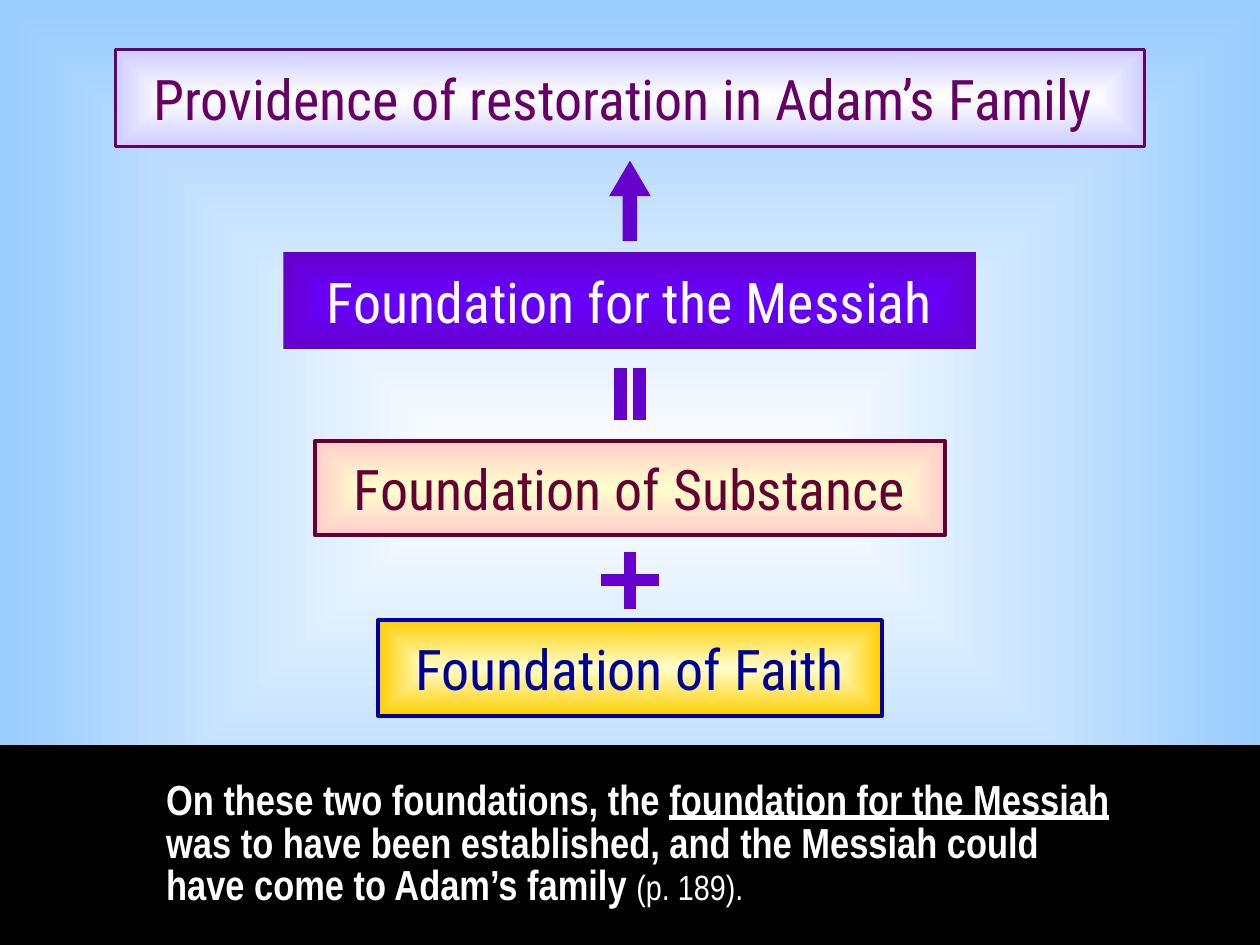
from lxml.etree import SubElement
from pptx import Presentation
from pptx.dml.color import RGBColor
from pptx.enum.shapes import MSO_CONNECTOR, MSO_SHAPE
from pptx.enum.text import MSO_ANCHOR, MSO_AUTO_SIZE, PP_ALIGN
from pptx.oxml.ns import qn
from pptx.util import Cm, Pt

WHITE = RGBColor(0xFF, 0xFF, 0xFF)
BLACK = RGBColor(0x00, 0x00, 0x00)
SKY = RGBColor(0x99, 0xCC, 0xFF)
LAVENDER = RGBColor(0xCC, 0xCC, 0xFF)
PLUM = RGBColor(0x66, 0x00, 0x66)
VIOLET = RGBColor(0x66, 0x00, 0xCC)
BRIGHT_VIOLET = RGBColor(0x66, 0x00, 0xFF)
CREAM = RGBColor(0xFF, 0xFF, 0xCC)
PINK = RGBColor(0xFF, 0xCC, 0xCC)
WINE = RGBColor(0x66, 0x00, 0x33)
GOLD = RGBColor(0xFF, 0xCC, 0x00)
NAVY = RGBColor(0x00, 0x00, 0x99)

SLIDE_WIDTH, SLIDE_HEIGHT = 25.4, 19.05
CENTER = SLIDE_WIDTH / 2
LABEL_FONT, NOTE_FONT = "Roboto Condensed", "Arial Narrow"
LABEL_HEIGHT = 1.6

# text, top, width, height, label width, inner, outer, text colour, outline in points
PANELS = [
    ("Providence of restoration in Adam’s Family ", 1, 20.75, 1.96, 20.52,
     WHITE, LAVENDER, PLUM, 1.5),
    ("Foundation for the Messiah", 5.08, 13.97, 1.96, 13.59,
     BRIGHT_VIOLET, VIOLET, WHITE, 0),
    ("Foundation of Substance", 8.89, 12.7, 1.9, 12.01,
     CREAM, PINK, WINE, 2.25),
    ("Foundation of Faith", 12.5, 10.16, 1.93, 9.27,
     CREAM, GOLD, NAVY, 2.25),
]
# x and y of both ends, as offsets from the slide's centre line and from the top
EQUALS_SIGN = [(-0.19, 7.42, -0.19, 8.46), (0.19, 7.42, 0.19, 8.46)]
PLUS_SIGN = [(0, 11.12, 0, 12.27), (-0.58, 11.69, 0.58, 11.69)]
# text, size, bold, underlined
NOTE = [
    ("On these two foundations, the ", 24, True, False),
    ("foundation for the Messiah", 24, True, True),
    (" was to have been established, and the Messiah could"
     " have come to Adam’s family ", 24, True, False),
    ("(p. 189).", 20, False, False),
]


def glow(fill, owner, inner, outer):
    """Fill with a gradient that runs from the centre to the edges."""
    fill.gradient()
    for stop, color in zip(fill.gradient_stops, (inner, outer)):
        stop.color.rgb = color
    gradient = owner.find(".//" + qn("a:gradFill"))
    gradient.remove(gradient.find(qn("a:lin")))
    route = SubElement(gradient, qn("a:path"), {"path": "shape"})
    SubElement(route, qn("a:fillToRect"), dict.fromkeys("ltrb", "50000"))


def place(shape, left, top, width, height):
    shape.left, shape.top = Cm(left), Cm(top)
    shape.width, shape.height = Cm(width), Cm(height)


def add_block(slide, kind, left, top, width, height):
    block = slide.shapes.add_shape(kind, Cm(left), Cm(top), Cm(width), Cm(height))
    block.shadow.inherit = False
    block.line.fill.background()
    return block


def prepare_text(box):
    frame = box.text_frame
    frame.word_wrap = True
    frame.auto_size = MSO_AUTO_SIZE.SHAPE_TO_FIT_TEXT
    frame.vertical_anchor = MSO_ANCHOR.TOP
    return frame.paragraphs[0]


def add_span(para, text, font, size, color):
    span = para.add_run()
    span.text = text
    span.font.name, span.font.size = font, Pt(size)
    span.font.color.rgb = color
    return span


def add_text_shadow(span, color):
    properties = span.font._element
    effects = SubElement(properties, qn("a:effectLst"))
    shadow = SubElement(effects, qn("a:outerShdw"),
                        {"dist": "35921", "dir": "2700000", "algn": "ctr"})
    SubElement(shadow, qn("a:srgbClr"), {"val": str(color)})
    properties.find(qn("a:solidFill")).addnext(effects)


def add_panel(slide, label, text, top, width, height, label_width,
              inner, outer, color, outline):
    panel = add_block(slide, MSO_SHAPE.RECTANGLE, CENTER - width / 2, top, width, height)
    glow(panel.fill, panel._element, inner, outer)
    if outline:
        panel.line.color.rgb, panel.line.width = color, Pt(outline)
    panel._element.addnext(label._element)
    place(label, CENTER - label_width / 2, top + (height - LABEL_HEIGHT) / 2,
          label_width, LABEL_HEIGHT)
    para = prepare_text(label)
    para.alignment = PP_ALIGN.CENTER
    span = add_span(para, text, LABEL_FONT, 32, color)
    add_text_shadow(span, BLACK if color == WHITE else WHITE)


def add_stroke(slide, x1, y1, x2, y2):
    stroke = slide.shapes.add_connector(
        MSO_CONNECTOR.STRAIGHT, Cm(CENTER + x1), Cm(y1), Cm(CENTER + x2), Cm(y2))
    stroke.line.color.rgb, stroke.line.width = VIOLET, Pt(7)
    SubElement(stroke._element.spPr, qn("a:effectLst"))


def add_note(slide):
    top = 15.04
    band = add_block(slide, MSO_SHAPE.RECTANGLE, 0, top, SLIDE_WIDTH, SLIDE_HEIGHT - top)
    band.fill.solid()
    band.fill.fore_color.rgb = band.line.color.rgb = BLACK
    band.line.width = Pt(0.75)
    box = slide.shapes.add_textbox(Cm(3.1), Cm(15.62), Cm(19.76), Cm(2.84))
    para = prepare_text(box)
    para.line_spacing = 0.85
    for text, size, bold, underlined in NOTE:
        span = add_span(para, text, NOTE_FONT, size, WHITE)
        span.font.bold, span.font.underline = bold, underlined


def main():
    deck = Presentation()
    deck.slide_width, deck.slide_height = Cm(SLIDE_WIDTH), Cm(SLIDE_HEIGHT)
    slide = deck.slides.add_slide(deck.slide_layouts[5])
    glow(slide.background.fill, slide._element, WHITE, SKY)

    for stroke in EQUALS_SIGN + PLUS_SIGN:
        add_stroke(slide, *stroke)
    arrow = add_block(slide, MSO_SHAPE.UP_ARROW, CENTER - 0.42, 3.24, 0.84, 1.62)
    arrow.adjustments[0], arrow.adjustments[1] = 0.35, 0.85
    arrow.fill.solid()
    arrow.fill.fore_color.rgb = VIOLET

    for number, panel in enumerate(PANELS):
        label = slide.shapes.add_textbox(0, 0, 0, 0) if number else slide.shapes.title
        add_panel(slide, label, *panel)
    add_note(slide)
    deck.save("out.pptx")


if __name__ == "__main__":
    main()
